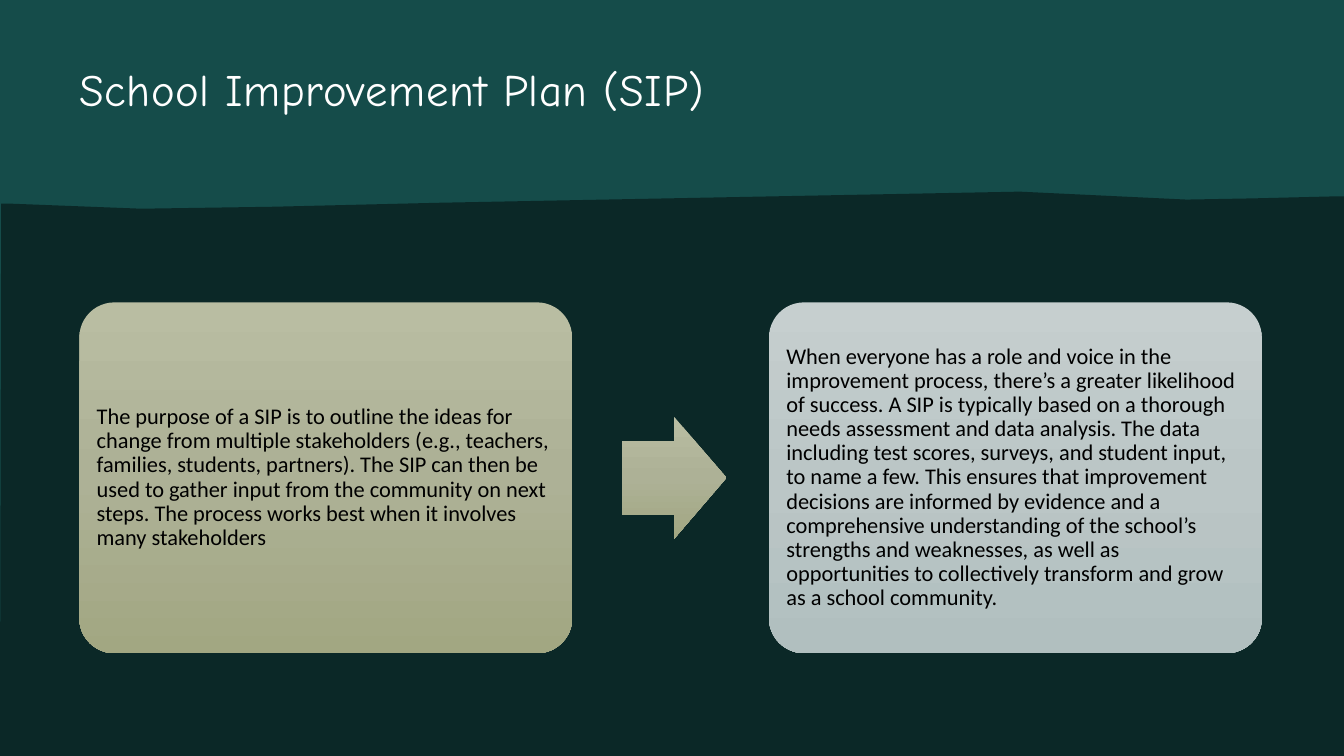
from copy import deepcopy
from dataclasses import dataclass

from pptx import Presentation
from pptx.dml.color import RGBColor as Rgb
from pptx.enum.shapes import MSO_SHAPE as Kind
from pptx.enum.text import MSO_ANCHOR as Anchor, PP_ALIGN as Align
from pptx.util import Cm, Pt


@dataclass(frozen=True)
class Theme:
    dark: str = "0B2827"
    teal: str = "154C4A"
    white: str = "FFFFFF"
    black: str = "000000"
    sage: tuple = ("B9BDA2", "ADB196", "A2A782")
    mist: tuple = ("C6CFCF", "BBC6C6", "B1BFBF")
    head: str = "Comic Neue"
    body: str = "Calibri"
    big: int = 32
    small: int = 16


THEME = Theme()
WIDE, HIGH = 33.87, 19.05
LEFT, TOP = 2, 7.62
CARD_W, CARD_H = 12.42, 8.84
RIGHT = 19.38
ARROW_W, ARROW_H = 2.64, 3.07

# Torn edge of the lower panel, in centimetres
EDGE = [
    (0.03, 5.13), (0.2, 5.13), (3.56, 5.26), (6.91, 5.21), (11.07, 5.11),
    (25.7, 4.83), (29.9, 5.03), (31.57, 5), (33.6, 4.95), (WIDE, 4.95),
    (WIDE, HIGH), (0, HIGH),
]

PLAN = (
    "The purpose of a SIP is to outline the ideas for change from multiple "
    "stakeholders (e.g., teachers, families, students, partners). The SIP "
    "can then be used to gather input from the community on next steps. "
    "The process works best when it involves many stakeholders"
)
VOICE = (
    "When everyone has a role and voice in the improvement process, there’s "
    "a greater likelihood of success. A SIP is typically based on a thorough "
    "needs assessment and data analysis. The data including test scores, "
    "surveys, and student input, to name a few. This ensures that "
    "improvement decisions are informed by evidence and a comprehensive "
    "understanding of the school’s strengths and weaknesses, as well as "
    "opportunities to collectively transform and grow as a school community."
)


def paint(shape, color):
    shape.fill.solid()
    shape.fill.fore_color.rgb = Rgb.from_string(color)
    shape.line.fill.background()
    shape.shadow.inherit = False


def shade(shape, colors):
    """Fill from top to bottom with three evenly spaced colours."""
    fill = shape.fill
    fill.gradient()
    fill.gradient_angle = 270
    stops = shape._element.spPr.find(".//{*}gsLst")
    stops.insert(1, deepcopy(stops[0]))
    for i, (stop, color) in enumerate(zip(fill.gradient_stops, colors)):
        stop.position = i / 2
        stop.color.rgb = Rgb.from_string(color)
    shape.line.fill.background()
    shape.shadow.inherit = False


def add_form(slide, kind, x, y, w, h, adjust=()):
    shape = slide.shapes.add_shape(kind, Cm(x), Cm(y), Cm(w), Cm(h))
    for i, value in enumerate(adjust):
        shape.adjustments[i] = value
    return shape


def write(shape, text, face, size, color, space, inset, anchor):
    frame = shape.text_frame
    frame.word_wrap = True
    frame.vertical_anchor = anchor
    frame.margin_left = frame.margin_right = Cm(inset)
    frame.margin_top = frame.margin_bottom = Cm(inset)
    para = frame.paragraphs[0]
    para.text = text
    para.alignment = Align.LEFT
    para.line_spacing = space
    font = para.font
    font.name, font.size = face, Pt(size)
    font.color.rgb = Rgb.from_string(color)
    return para


def add_panel(slide):
    first, *rest = [(Cm(x), Cm(y)) for x, y in EDGE]
    form = slide.shapes.build_freeform(*first)
    form.add_line_segments(rest, close=True)
    paint(form.convert_to_shape(), THEME.dark)


def add_title(slide, text):
    box = slide.shapes.add_textbox(Cm(LEFT), Cm(1.73), Cm(29.8), Cm(1.9))
    para = write(box, text, THEME.head, THEME.big, THEME.white,
                 0.88, 0, Anchor.TOP)
    para.runs[0]._r.get_or_add_rPr().set("spc", "40")


def add_card(slide, x, colors, text):
    card = add_form(slide, Kind.ROUNDED_RECTANGLE, x, TOP,
                    CARD_W, CARD_H, [0.1])
    shade(card, colors)
    write(card, text, THEME.body, THEME.small, THEME.black,
          0.9, 0.18, Anchor.MIDDLE)


def add_arrow(slide):
    y = TOP + (CARD_H - ARROW_H) / 2
    arrow = add_form(slide, Kind.RIGHT_ARROW, 15.67, y,
                     ARROW_W, ARROW_H, [0.6, 0.5])
    shade(arrow, THEME.sage)


def main():
    deck = Presentation()
    deck.slide_width, deck.slide_height = Cm(WIDE), Cm(HIGH)
    slide = deck.slides.add_slide(deck.slide_layouts[6])

    # Backdrop
    back = slide.background.fill
    back.solid()
    back.fore_color.rgb = Rgb.from_string(THEME.dark)
    paint(add_form(slide, Kind.RECTANGLE, 0, 0, WIDE, HIGH), THEME.teal)
    add_panel(slide)

    # Heading
    add_title(slide, "School Improvement Plan (SIP)")

    # Purpose leads to shared voice
    add_card(slide, LEFT, THEME.sage, PLAN)
    add_arrow(slide)
    add_card(slide, RIGHT, THEME.mist, VOICE)

    deck.save("out.pptx")


if __name__ == "__main__":
    main()
